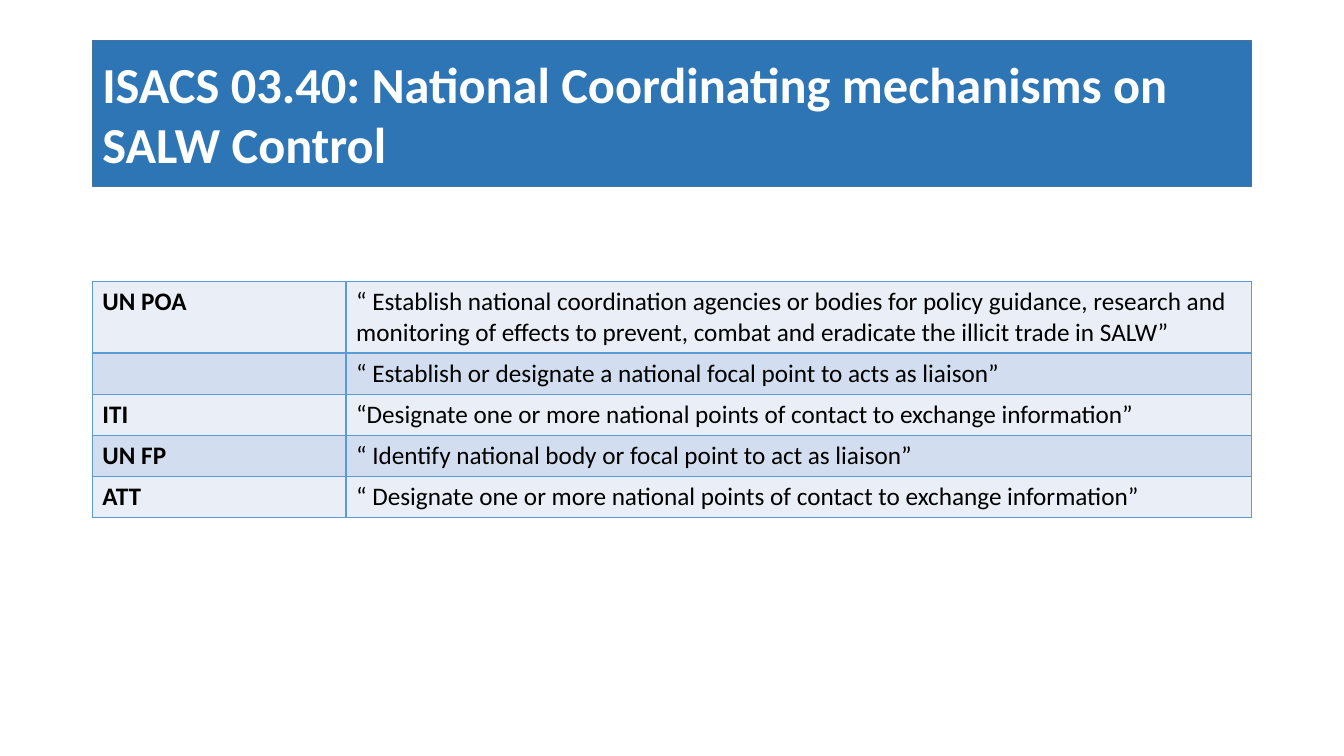
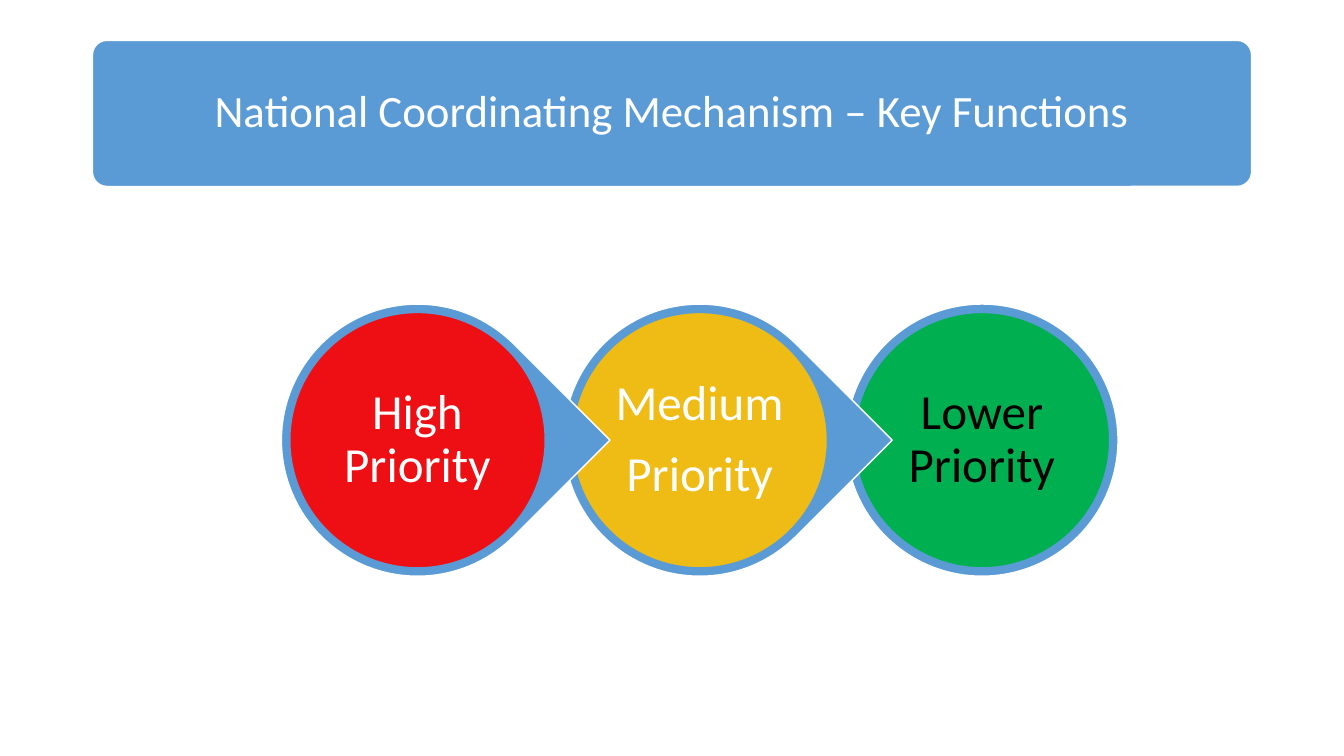
from lxml import etree
from pptx import Presentation
from pptx.dml.color import RGBColor
from pptx.enum.shapes import MSO_SHAPE
from pptx.enum.text import MSO_ANCHOR, PP_ALIGN
from pptx.oxml.ns import qn
from pptx.util import Inches, Pt

RECTANGLE = MSO_SHAPE.RECTANGLE
ROUNDED = MSO_SHAPE.ROUNDED_RECTANGLE
ELLIPSE = MSO_SHAPE.OVAL
TEARDROP = MSO_SHAPE.TEAR
MIDDLE = MSO_ANCHOR.MIDDLE
LEFT = PP_ALIGN.LEFT
CENTER = PP_ALIGN.CENTER

WHITE = RGBColor(0xFF, 0xFF, 0xFF)
BLACK = RGBColor(0x00, 0x00, 0x00)
BLUE = RGBColor(0x5B, 0x9B, 0xD5)
DEEP_BLUE = RGBColor(0x2E, 0x75, 0xB6)
EDGE_BLUE = RGBColor(0x43, 0x73, 0x9E)
BANDS = (RGBColor(0xEA, 0xEF, 0xF7), RGBColor(0xD2, 0xDE, 0xEF))
RED = RGBColor(0xFF, 0x00, 0x00)
AMBER = RGBColor(0xFF, 0xC0, 0x00)
GREEN = RGBColor(0x00, 0xB0, 0x50)

FONT = "Calibri"
COLUMNS, ROWS = 160, 90
MARGIN, CONTENT_WIDTH = 11, 138
TITLE_TOP, TITLE_HEIGHT = 4.8, 17.4

COMMITMENTS = [
    ("UN POA", "“ Establish national coordination agencies or bodies for policy guidance, "
               "research and monitoring of effects to prevent, combat and eradicate "
               "the illicit trade in SALW”"),
    ("", "“ Establish or designate a national focal point to acts as liaison”"),
    ("ITI", "“Designate one or more national points of contact to exchange information”"),
    ("UN FP", "“ Identify national body or focal point to act as liaison”"),
    ("ATT", "“ Designate one or more national points of contact to exchange information”"),
]

PRIORITIES = [
    ("High Priority", RED, WHITE, 90),
    ("Medium\nPriority", AMBER, WHITE, 90),
    ("Lower Priority", GREEN, BLACK, 100),
]


def write_text(frame, text, size=18, color=BLACK, bold=False, align=LEFT,
               spacing=1.0, after=0.0):
    for index, line in enumerate(text.split("\n")):
        paragraph = frame.add_paragraph() if index else frame.paragraphs[0]
        paragraph.alignment = align
        paragraph.line_spacing = spacing
        paragraph.space_after = Pt(size * after)
        paragraph.font.size = Pt(size)
        if line:
            run = paragraph.add_run()
            run.text = line
            run.font.name = FONT
            run.font.size = Pt(size)
            run.font.bold = bold
            run.font.color.rgb = color


class Deck:
    def __init__(self):
        self.presentation = Presentation()
        self.presentation.slide_width = Inches(13.33)
        self.presentation.slide_height = Inches(7.5)
        self.slide = None

    def x(self, columns):
        return round(self.presentation.slide_width * columns / COLUMNS)

    def y(self, rows):
        return round(self.presentation.slide_height * rows / ROWS)

    def new_slide(self):
        self.slide = self.presentation.slides.add_slide(self.presentation.slide_layouts[6])

    def shape(self, kind, left, top, width, height, fill, line, opacity=100):
        shape = self.slide.shapes.add_shape(
            kind, self.x(left), self.y(top), self.x(width), self.y(height))
        shape.shadow.inherit = False
        shape.fill.solid()
        shape.fill.fore_color.rgb = fill
        shape.line.color.rgb = line
        shape.line.width = Pt(1)
        if opacity < 100:
            tint = shape.element.spPr.find(qn("a:solidFill"))[0]
            etree.SubElement(tint, qn("a:alpha"), val=str(opacity * 1000))
        return shape

    def title(self, text, kind, fill, line, **text_format):
        band = self.shape(kind, MARGIN, TITLE_TOP, CONTENT_WIDTH, TITLE_HEIGHT, fill, line)
        if kind == ROUNDED:
            band.adjustments[0] = 0.1
        band.text_frame.word_wrap = True
        band.text_frame.vertical_anchor = MIDDLE
        write_text(band.text_frame, text, color=WHITE, **text_format)

    def cell_borders(self, cell, color):
        properties = cell._tc.get_or_add_tcPr()
        for position, side in enumerate(("lnL", "lnR", "lnT", "lnB")):
            border = etree.Element(qn(f"a:{side}"), w=str(Pt(1)))
            fill = etree.SubElement(border, qn("a:solidFill"))
            etree.SubElement(fill, qn("a:srgbClr"), val=str(color))
            properties.insert(position, border)

    def table(self, entries, top, label_width, row_height):
        widths = (label_width, CONTENT_WIDTH - label_width)
        table = self.slide.shapes.add_table(
            len(entries), len(widths), self.x(MARGIN), self.y(top),
            self.x(CONTENT_WIDTH), self.y(row_height * len(entries))).table
        table.first_row = False
        table.horz_banding = False
        for column, width in zip(table.columns, widths):
            column.width = self.x(width)
        for row_index, entry in enumerate(entries):
            for column_index, text in enumerate(entry):
                cell = table.cell(row_index, column_index)
                cell.fill.solid()
                cell.fill.fore_color.rgb = BANDS[row_index % 2]
                self.cell_borders(cell, BLUE)
                write_text(cell.text_frame, text, bold=column_index == 0)

    def priority(self, text, left, top, size, fill, color, opacity, pointed):
        backing = self.shape(TEARDROP if pointed else ELLIPSE,
                             left, top, size, size, BLUE, WHITE)
        if pointed:
            backing.adjustments[0] = 1
            backing.rotation = 45
        disc_size = 30.4
        inset = (size - disc_size) / 2
        disc = self.shape(ELLIPSE, left + inset, top + inset, disc_size, disc_size,
                          fill, BLUE, opacity)
        frame = disc.text_frame
        frame.word_wrap = True
        frame.vertical_anchor = MIDDLE
        frame.margin_left = frame.margin_right = Inches(0.05)
        frame.margin_top = frame.margin_bottom = Inches(0.05)
        write_text(frame, text, size=35, color=color, align=CENTER, spacing=0.9, after=0.35)

    def priority_chain(self, priorities, left, top, size, step):
        last = len(priorities) - 1
        for index, (text, fill, color, opacity) in reversed(list(enumerate(priorities))):
            self.priority(text, left + index * step, top, size, fill, color, opacity,
                          pointed=index < last)


def main():
    deck = Deck()

    deck.new_slide()
    deck.table(COMMITMENTS, top=33.5, label_width=30.2, row_height=4.9)
    deck.title("ISACS 03.40: National Coordinating mechanisms on SALW Control",
               RECTANGLE, DEEP_BLUE, EDGE_BLUE, size=36, bold=True)

    deck.new_slide()
    deck.priority_chain(PRIORITIES, left=33.5, top=36.2, size=32.4, step=33.6)
    deck.title("National Coordinating Mechanism – Key Functions",
               ROUNDED, BLUE, WHITE, size=32, align=CENTER, spacing=0.9, after=0.35)

    deck.presentation.save("out.pptx")


if __name__ == "__main__":
    main()
